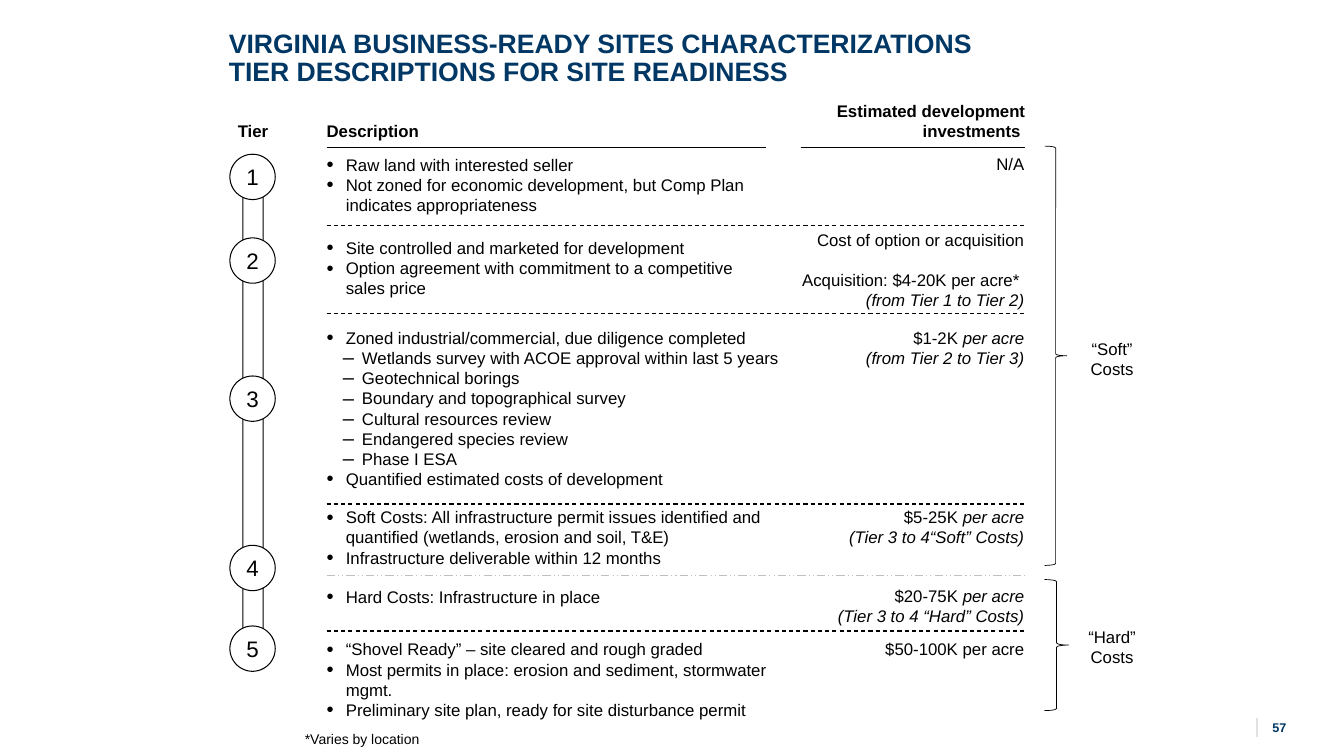
"""Build the slide on site readiness tiers and their development costs."""
from lxml.etree import SubElement
from pptx import Presentation
from pptx.dml.color import RGBColor
from pptx.enum.dml import MSO_LINE
from pptx.enum.shapes import MSO_CONNECTOR, MSO_SHAPE
from pptx.enum.text import MSO_ANCHOR, MSO_AUTO_SIZE, PP_ALIGN
from pptx.oxml.ns import qn
from pptx.util import Inches, Pt

NAVY = RGBColor(0x00, 0x37, 0x64)
BLACK = RGBColor(0, 0, 0)
WHITE = RGBColor(0xFF, 0xFF, 0xFF)
GREY = RGBColor(0xBF, 0xBF, 0xBF)
LIGHT_GREY = RGBColor(0xE1, 0xE1, 0xE1)

DESCRIPTION_LEFT = 3.24
DESCRIPTION_WIDTH = 4.37
INVESTMENT_LEFT = 7.94
INVESTMENT_RIGHT = 10.16
LINE_HEIGHT = 0.2
BLANK_LINE = 13.8

TIER_TOPS = [1.53, 2.36, 3.73, 5.41, 6.21]
DIVIDERS = [2.24, 3.11, 5, 6.26]
DESCRIPTIONS = [
    (1.53, 4.37, 0.61, [
        "Raw land with interested seller",
        "Not zoned for economic development, but Comp Plan indicates appropriateness"]),
    (2.36, 4.37, 0.61, [
        "Site controlled and marketed for development",
        "Option agreement with commitment to a competitive sales price"]),
    (3.25, 5, 1.82, [
        "Zoned industrial/commercial, due diligence completed",
        "‒Wetlands survey with ACOE approval within last 5 years",
        "‒Geotechnical borings",
        "‒Boundary and topographical survey",
        "‒Cultural resources review",
        "‒Endangered species review",
        "‒Phase I ESA",
        "Quantified estimated costs of development"]),
    (5.03, 4.37, 1.01, [
        "Soft Costs: All infrastructure permit issues identified and quantified "
        "(wetlands, erosion and soil, T&E)",
        "Infrastructure deliverable within 12 months",
        "Hard Costs: Infrastructure in place"]),
    (6.34, 4.37, 0.81, [
        "“Shovel Ready” – site cleared and rough graded",
        "Most permits in place: erosion and sediment, stormwater mgmt.",
        "Preliminary site plan, ready for site disturbance permit"]),
]
INVESTMENTS = [
    (1.53, ["N/A"]),
    (2.28, ["Cost of option or acquisition", "Acquisition: $4-20K per acre* ",
            "|(from Tier 1 to Tier 2)"]),
    (3.25, ["$1-2K |per acre", "|(from Tier 2 to Tier 3)"]),
    (5.03, ["$5-25K |per acre", "|(Tier 3 to 4“Soft” Costs)"]),
    (5.81, ["$20-75K |per acre", "|(Tier 3 to 4 “Hard” Costs)"]),
    (6.34, ["$50-100K per acre"]),
]
SPACED_PARAGRAPHS = ("Hard Costs: Infrastructure in place", "Acquisition: $4-20K per acre* ")
COSTS = [("“Soft” Costs", 3.36, 1.45, 0.22, 4.16),
         ("“Hard” Costs", 6.22, 5.75, 0.24, 1.3)]


class SlideBuilder:
    """Draw styled elements on one slide."""

    def __init__(self, slide, font_name="Arial", size=12):
        self.slide = slide
        self.font_name = font_name
        self.size = size

    def style(self, paragraph, size=None, bold=False, color=BLACK):
        for run in paragraph.runs:
            run.font.name = self.font_name
            run.font.size = Pt(size or self.size)
            run.font.bold = bold
            run.font.color.rgb = color

    def title(self, text, left, top, width, height):
        shape = self.slide.shapes.title
        shape.left, shape.top = Inches(left), Inches(top)
        shape.width, shape.height = Inches(width), Inches(height)
        frame = shape.text_frame
        frame.text = text
        frame.auto_size = MSO_AUTO_SIZE.NONE
        frame.vertical_anchor = MSO_ANCHOR.TOP
        paragraph = frame.paragraphs[0]
        paragraph.alignment = PP_ALIGN.LEFT
        paragraph.line_spacing = 0.9
        self.style(paragraph, 19, True, NAVY)

    def bullet(self, paragraph, character, indent):
        properties = paragraph._p.get_or_add_pPr()
        properties.set("marL", str(Inches(indent)))
        properties.set("indent", str(-Inches(0.19)))
        SubElement(properties, qn("a:buSzPct"), val="120000")
        SubElement(properties, qn("a:buFont"), typeface=self.font_name)
        SubElement(properties, qn("a:buChar"), char=character)

    def text(self, texts, left, top, width, height, align=PP_ALIGN.LEFT,
             anchor=MSO_ANCHOR.TOP, bulleted=False, **style):
        box = self.slide.shapes.add_textbox(
            Inches(left), Inches(top), Inches(width), Inches(height))
        frame = box.text_frame
        frame.word_wrap = True
        frame.vertical_anchor = anchor
        frame.margin_left = frame.margin_right = frame.margin_top = frame.margin_bottom = 0
        for index, text in enumerate(texts):
            paragraph = frame.add_paragraph() if index else frame.paragraphs[0]
            paragraph.alignment = align
            if bulleted:
                dashed = text.startswith("‒")
                paragraph.level = int(dashed)
                self.bullet(paragraph, "‒" if dashed else "•", 0.35 if dashed else 0.19)
            if text in SPACED_PARAGRAPHS:
                paragraph.space_before = Pt(BLANK_LINE)
            plain, _, italic = text.removeprefix("‒").partition("|")
            paragraph.text = plain
            if italic:
                run = paragraph.add_run()
                run.text = italic
                run.font.italic = True
            self.style(paragraph, **style)

    def shape(self, kind, left, top, width, height, fill=WHITE, line_width=0.75):
        shape = self.slide.shapes.add_shape(
            kind, Inches(left), Inches(top), Inches(width), Inches(height))
        shape.shadow.inherit = False
        if fill is None:
            shape.fill.background()
        else:
            shape.fill.solid()
            shape.fill.fore_color.rgb = fill
        shape.line.color.rgb = BLACK
        shape.line.width = Pt(line_width)
        return shape

    def tier(self, label, left, top, diameter):
        circle = self.shape(MSO_SHAPE.OVAL, left, top, diameter, diameter)
        frame = circle.text_frame
        frame.text = label
        frame.word_wrap = False
        frame.vertical_anchor = MSO_ANCHOR.MIDDLE
        frame.paragraphs[0].alignment = PP_ALIGN.CENTER
        self.style(frame.paragraphs[0], 16)

    def line(self, start_x, start_y, end_x, end_y, color=BLACK, width=0.75, dash=None):
        connector = self.slide.shapes.add_connector(
            MSO_CONNECTOR.STRAIGHT, Inches(start_x), Inches(start_y),
            Inches(end_x), Inches(end_y))
        connector.line.color.rgb = color
        connector.line.width = Pt(width)
        if dash:
            connector.line.dash_style = dash
        SubElement(connector._element.spPr, qn("a:effectLst"))


def main():
    presentation = Presentation()
    presentation.slide_width, presentation.slide_height = Inches(13.33), Inches(7.5)
    slide = presentation.slides.add_slide(presentation.slide_layouts[5])
    builder = SlideBuilder(slide)

    builder.title("VIRGINIA BUSINESS-READY SITES CHARACTERIZATIONS\v"
                  "TIER DESCRIPTIONS FOR SITE READINESS", 2.17, 0.25, 8.62, 0.83)
    builder.line(12.47, 7.12, 12.47, 7.31, LIGHT_GREY, 1.5)
    builder.text(["57"], 12.62, 7.14, 0.67, 0.15, size=9, bold=True, color=NAVY)

    arrow = builder.shape(MSO_SHAPE.DOWN_ARROW, 2.41, 1.76, 0.2, 4.59)
    arrow.adjustments[0], arrow.adjustments[1] = 1, 0.46
    for number, top in enumerate(TIER_TOPS, 1):
        builder.tier(str(number), 2.28, top, 0.45)

    for heading, left, top, width, height, align in [
            ("Tier", 2.01, 1.2, 1, 0.2, PP_ALIGN.CENTER),
            ("Description", DESCRIPTION_LEFT, 1.2, DESCRIPTION_WIDTH, 0.2, PP_ALIGN.LEFT),
            ("Estimated development investments ", INVESTMENT_LEFT, 1, 2.23, 0.4,
             PP_ALIGN.RIGHT)]:
        builder.text([heading], left, top, width, height, align, MSO_ANCHOR.BOTTOM, bold=True)
    builder.line(DESCRIPTION_LEFT, 1.46, 7.6, 1.46)
    builder.line(INVESTMENT_LEFT, 1.46, 10.17, 1.46)

    for top, width, height, texts in DESCRIPTIONS:
        builder.text(texts, DESCRIPTION_LEFT, top, width, height, bulleted=True)
    for top, texts in INVESTMENTS:
        builder.text(texts, 7.81, top, INVESTMENT_RIGHT - 7.81,
                     LINE_HEIGHT * len(texts), PP_ALIGN.RIGHT)
    for y in DIVIDERS:
        builder.line(DESCRIPTION_LEFT, y, INVESTMENT_RIGHT, y, dash=MSO_LINE.DASH)
    builder.line(DESCRIPTION_LEFT, 5.71, INVESTMENT_RIGHT, 5.71, GREY,
                 dash=MSO_LINE.DASH_DOT_DOT)

    for label, label_top, top, width, height in COSTS:
        builder.shape(MSO_SHAPE.RIGHT_BRACE, 10.36, top, width, height, None, 0.5)
        builder.text([label], 10.65, label_top, 0.76, 0.4, PP_ALIGN.CENTER)
    builder.text(["*Varies by location "], 2.8, 7.25, 1.62, 0.17, PP_ALIGN.CENTER, size=10)
    presentation.save("out.pptx")


if __name__ == "__main__":
    main()
